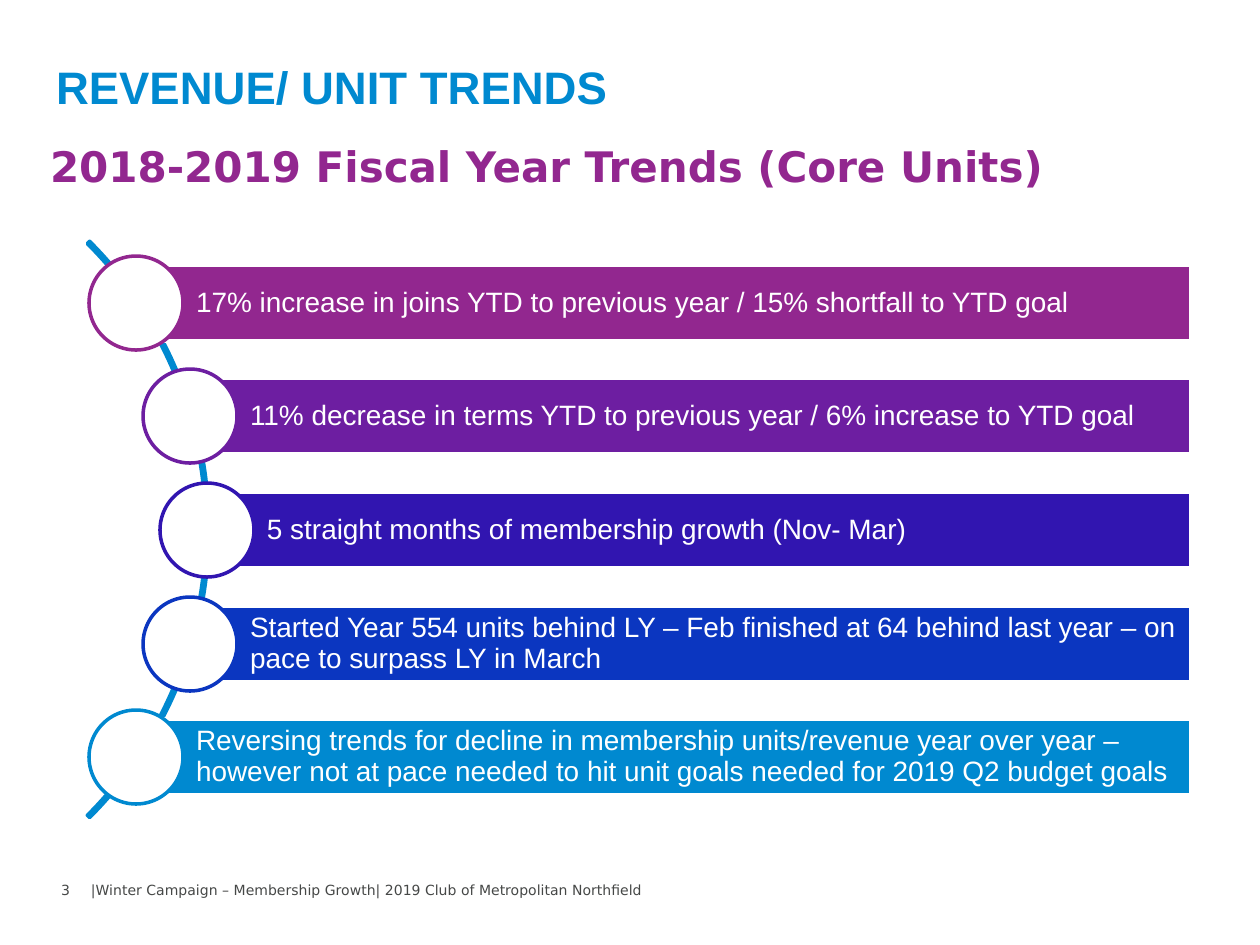
from pptx import Presentation
from pptx.dml.color import RGBColor
from pptx.enum.shapes import MSO_SHAPE
from pptx.enum.text import MSO_ANCHOR, MSO_AUTO_SIZE, PP_ALIGN
from pptx.util import Emu, Pt

COLORS = {
    "blue": "0089D0",
    "purple": "92278F",
    "violet": "6D1EA1",
    "indigo": "3115B0",
    "royal": "0B36C0",
    "gray": "464847",
    "white": "FFFFFF",
}

TRENDS = [
    (136, "purple", "17% increase in joins YTD to previous year / 15% shortfall to YTD goal"),
    (190, "violet", "11% decrease in terms YTD to previous year / 6% increase to YTD goal"),
    (207, "indigo", "5 straight months of membership growth (Nov- Mar)"),
    (190, "royal", "Started Year 554 units behind LY – Feb finished at 64 behind last year "
                   "– on pace to surpass LY in March"),
    (136, "blue", "Reversing trends for decline in membership units/revenue year over year – "
                  "however not at pace needed to hit unit goals needed for 2019 Q2 budget goals"),
]
BAR_RIGHT, BAR_HEIGHT, CIRCLE = 1191, 76, 94
MIDDLE, PITCH = 530, 113.5


def px(n):
    return Emu(round(n * 914400 / 126))


def rgb(name):
    return RGBColor.from_string(COLORS[name])


def write(sp, text, size=16, font="Arial", color="white", bold=False,
          anchor=MSO_ANCHOR.TOP, insets=(13, 6, 13, 6), spacing=1.0):
    tf = sp.text_frame
    tf.word_wrap = True
    tf.auto_size = MSO_AUTO_SIZE.NONE
    tf.vertical_anchor = anchor
    tf.margin_left, tf.margin_top, tf.margin_right, tf.margin_bottom = map(px, insets)
    p = tf.paragraphs[0]
    p.alignment = PP_ALIGN.LEFT
    p.line_spacing = spacing
    r = p.add_run()
    r.text = text
    r.font.size = Pt(size)
    r.font.name = font
    r.font.bold = bold
    r.font.color.rgb = rgb(color)


class Deck:
    line_width = Pt(2)

    def __init__(self, width, height):
        self.prs = Presentation()
        self.prs.slide_width, self.prs.slide_height = px(width), px(height)
        self.slide = None

    def add_slide(self):
        self.slide = self.prs.slides.add_slide(self.prs.slide_layouts[5])

    def title(self, text, x, y, w, h, **fmt):
        sp = self.slide.shapes.title
        sp.left, sp.top, sp.width, sp.height = map(px, (x, y, w, h))
        write(sp, text, **fmt)

    def text(self, text, x, y, w, h, **fmt):
        write(self.slide.shapes.add_textbox(*map(px, (x, y, w, h))), text, **fmt)

    def shape(self, parent, kind, x, y, w, h, line, fill=None):
        sp = parent.shapes.add_shape(kind, *map(px, (x, y, w, h)))
        sp.shadow.inherit = False
        if fill:
            sp.fill.solid()
            sp.fill.fore_color.rgb = rgb(fill)
        else:
            sp.fill.background()
        sp.line.color.rgb = rgb(line)
        sp.line.width = self.line_width
        return sp

    def arc(self, parent, x, y, size, color):
        sp = self.shape(parent, MSO_SHAPE.BLOCK_ARC, x, y, size, size, color)
        for i, value in enumerate((189, 27, 0.004)):
            sp.adjustments[i] = value

    def trend(self, parent, x, middle, color, text):
        bar = self.shape(parent, MSO_SHAPE.RECTANGLE, x, middle - BAR_HEIGHT // 2,
                         BAR_RIGHT - x, BAR_HEIGHT, "white", color)
        write(bar, text, anchor=MSO_ANCHOR.MIDDLE, insets=(60, 5, 5, 5), spacing=0.9)
        self.shape(parent, MSO_SHAPE.OVAL, x - CIRCLE // 2, middle - CIRCLE // 2,
                   CIRCLE, CIRCLE, color, "white")


def main():
    deck = Deck(1260, 945)
    deck.add_slide()
    deck.title("REVENUE/ UNIT TRENDS", 43, 53, 1154, 116, size=26, color="blue", bold=True)
    footer = {"size": 8, "font": "DejaVu Sans", "color": "gray"}
    deck.text("|Winter Campaign – Membership Growth| 2019 Club of Metropolitan Northfield",
              78, 876, 1119, 39, **footer)
    deck.text("3", 48, 876, 57, 30, **footer)
    deck.text("2018-2019 Fiscal Year Trends (Core Units)", 37, 135, 1090, 165,
              size=24, font="DejaVu Sans", color="purple", bold=True)

    diagram = deck.slide.shapes.add_group_shape()
    deck.arc(diagram, -606, 122, 815, "blue")
    for i, (x, color, text) in enumerate(TRENDS):
        deck.trend(diagram, x, round(MIDDLE + (i - 2) * PITCH), color, text)
    deck.prs.save("out.pptx")


if __name__ == "__main__":
    main()
